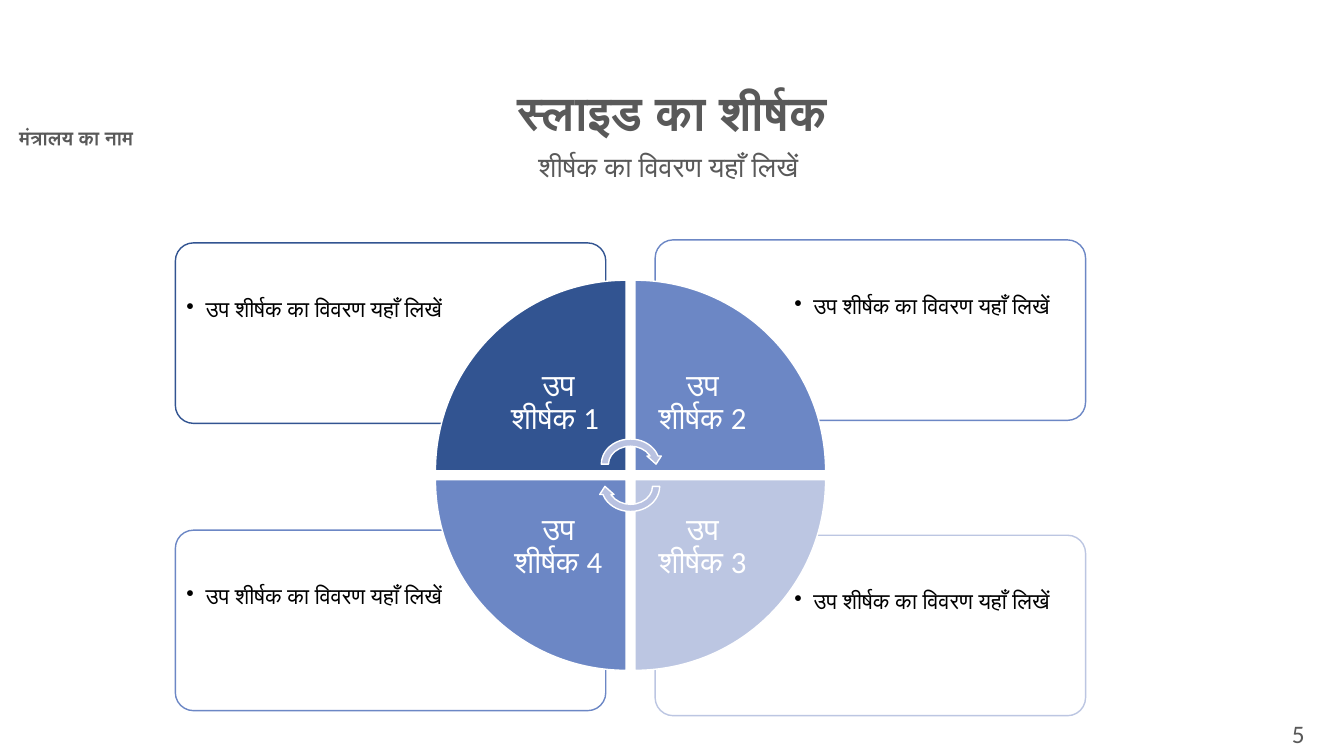
import lxml.etree
import pptx
import pptx.dml.color
import pptx.enum.shapes
import pptx.enum.text
import pptx.oxml.ns
import pptx.util

PX = 9144
WHITE = "FFFFFF"
GREY = "595959"
NAVY = "325491"
BLUE = "6C87C5"
PALE = "BCC6E2"
ARROW = "B9C2E1"

SHAPES = pptx.enum.shapes.MSO_SHAPE
ANCHORS = pptx.enum.text.MSO_ANCHOR
ALIGNS = pptx.enum.text.PP_ALIGN

DETAIL = "उप शीर्षक का विवरण यहाँ लिखें"
WEDGE_SIZE = 189
LABEL_SIZE = 134
QUADRANTS = [
    {"label": "उप शीर्षक 3", "colour": PALE, "right": True, "lower": True, "top": 531, "turn": 180},
    {"label": "उप शीर्षक 4", "colour": BLUE, "right": False, "lower": True, "top": 526, "turn": 270},
    {"label": "उप शीर्षक 2", "colour": BLUE, "right": True, "lower": False, "top": 238, "turn": 90},
    {"label": "उप शीर्षक 1 ", "colour": NAVY, "right": False, "lower": False, "top": 241, "turn": 0},
]


def colour(value):
    return pptx.dml.color.RGBColor.from_string(value)


def place(left, top, width, height):
    return [pptx.util.Emu(length * PX) for length in (left, top, width, height)]


def add_bullet(para, indent):
    properties = para._p.get_or_add_pPr()
    properties.set("marL", str(indent * PX))
    properties.set("indent", str(-indent * PX))
    bullet = lxml.etree.SubElement(properties, pptx.oxml.ns.qn("a:buChar"))
    bullet.set("char", "•")


def add_text(page, text, frame, size, ink=GREY, font="Calibri", bold=False,
             align=ALIGNS.CENTER, anchor=ANCHORS.TOP, inset=None, spacing=0.9, bullet=False):
    box = page.shapes.add_textbox(*place(*frame))
    body = box.text_frame
    body.word_wrap = True
    body.vertical_anchor = anchor
    if inset is not None:
        margin = pptx.util.Emu(inset * PX)
        body.margin_left = body.margin_right = margin
        body.margin_top = body.margin_bottom = margin
    para = body.paragraphs[0]
    if bullet:
        add_bullet(para, 19)
    para.alignment = align
    para.line_spacing = spacing
    span = para.add_run()
    span.text = text
    span.font.name = font
    span.font.size = pptx.util.Pt(size)
    span.font.bold = bold
    span.font.color.rgb = colour(ink)


def add_figure(page, kind, frame, fill, line, turn=0):
    figure = page.shapes.add_shape(kind, *place(*frame))
    figure.shadow.inherit = False
    figure.fill.solid()
    figure.fill.fore_color.rgb = colour(fill)
    figure.line.color.rgb = colour(line)
    figure.line.width = pptx.util.Pt(1)
    figure.rotation = turn
    return figure


def add_detail(page, quadrant):
    left = 650 if quadrant["right"] else 174
    top = quadrant["top"]
    panel = add_figure(page, SHAPES.ROUNDED_RECTANGLE, (left, top, 427, 179), WHITE, quadrant["colour"])
    panel.adjustments[0] = 0.1
    text_left = left + (131 if quadrant["right"] else 4)
    text_top = top + (48 if quadrant["lower"] else 4)
    anchor = ANCHORS.TOP if quadrant["lower"] else ANCHORS.MIDDLE
    add_text(page, DETAIL, (text_left, text_top, 291, 126), 16, ink="000000",
             align=ALIGNS.LEFT, anchor=anchor, inset=7, bullet=True)


def add_wedge(page, quadrant):
    left = 630 if quadrant["right"] else 432
    top = 476 if quadrant["lower"] else 278
    add_figure(page, SHAPES.PIE_WEDGE, (left, top, WEDGE_SIZE, WEDGE_SIZE),
               quadrant["colour"], WHITE, quadrant["turn"])
    shift = WEDGE_SIZE - LABEL_SIZE
    label_left = left if quadrant["right"] else left + shift
    label_top = top if quadrant["lower"] else top + shift
    add_text(page, quadrant["label"], (label_left, label_top, LABEL_SIZE, LABEL_SIZE), 22,
             ink=WHITE, anchor=ANCHORS.MIDDLE, inset=17)


def main():
    deck = pptx.Presentation()
    deck.slide_width = pptx.util.Emu(12192000)
    deck.slide_height = pptx.util.Emu(6858000)
    page = deck.slides.add_slide(deck.slide_layouts[6])

    add_text(page, "मंत्रालय का नाम", (-11, 123, 173, 35), 14, font="Roboto", bold=True)
    for quadrant in QUADRANTS:
        add_detail(page, quadrant)
    for quadrant in reversed(QUADRANTS):
        add_wedge(page, quadrant)
    for top, turn in ((432, 0), (454, 180)):
        add_figure(page, SHAPES.CIRCULAR_ARROW, (593, top, 65, 57), ARROW, WHITE, turn)

    add_text(page, "स्लाइड का शीर्षक", (186, 84, 961, 55), 34, bold=True)
    add_text(page, "शीर्षक का विवरण यहाँ लिखें ", (186, 147, 961, 63), 20)
    add_text(page, "5", (1242, 705, 92, 45), 18, anchor=ANCHORS.MIDDLE, spacing=1.0)
    deck.save("out.pptx")


if __name__ == "__main__":
    main()
